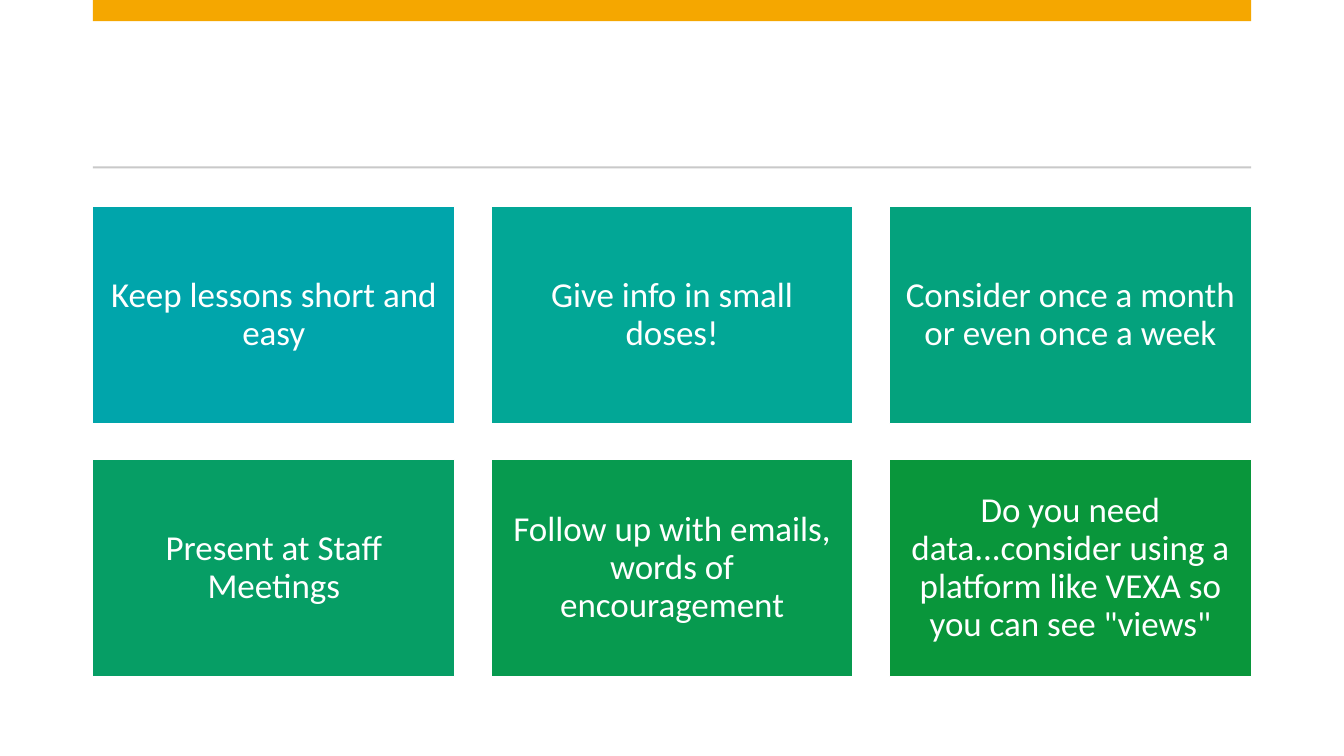
"""Build a slide of six tips for sharing lessons with staff."""
import pptx
import pptx.util
import pptx.dml.color
import pptx.enum.shapes
import pptx.enum.text

Inches = pptx.util.Inches
RGBColor = pptx.dml.color.RGBColor

WHITE = RGBColor(0xFF, 0xFF, 0xFF)
GOLD = RGBColor(0xF5, 0xA7, 0x00)
GREY = RGBColor(0xC9, 0xC9, 0xC9)

TIPS = [
    ("Keep lessons short and easy", RGBColor(0x00, 0xA5, 0xAB)),
    ("Give info in small doses!", RGBColor(0x02, 0xA7, 0x96)),
    ("Consider once a month or even once a week", RGBColor(0x04, 0xA2, 0x7D)),
    ("Present at Staff Meetings", RGBColor(0x06, 0x9E, 0x65)),
    ("Follow up with emails, words of encouragement", RGBColor(0x07, 0x9A, 0x4F)),
    ('Do you need data...consider using a platform like VEXA so you can see "views"',
     RGBColor(0x09, 0x96, 0x3B)),
]
BARS = [(0, 0.21, GOLD), (1.65, 0.02, GREY)]

LEFT, TOP, SPAN = 0.92, 2.05, 11.49
WIDE, HIGH, GAP, COLS = 3.59, 2.15, 0.36, 3

FRAME = {
    "word_wrap": True,
    "vertical_anchor": pptx.enum.text.MSO_ANCHOR.MIDDLE,
    "margin_left": Inches(0.1),
    "margin_right": Inches(0.1),
    "margin_top": Inches(0.1),
    "margin_bottom": Inches(0.1),
}
PARA = {"alignment": pptx.enum.text.PP_ALIGN.CENTER, "line_spacing": 0.9}
FONT = {"name": "Calibri", "size": pptx.util.Pt(25)}


def apply(item, values):
    for name, value in values.items():
        setattr(item, name, value)


def add_box(slide, left, top, wide, high, fill):
    box = slide.shapes.add_shape(
        pptx.enum.shapes.MSO_SHAPE.RECTANGLE,
        Inches(left), Inches(top), Inches(wide), Inches(high))
    box.shadow.inherit = False
    box.fill.solid()
    box.fill.fore_color.rgb = fill
    box.line.fill.background()
    return box


def add_tip(slide, index, text, fill):
    row, col = divmod(index, COLS)
    box = add_box(slide, LEFT + col * (WIDE + GAP), TOP + row * (HIGH + GAP),
                  WIDE, HIGH, fill)
    box.line.color.rgb = WHITE
    box.line.width = pptx.util.Pt(1)
    frame = box.text_frame
    para = frame.paragraphs[0]
    run = para.add_run()
    run.text = text
    apply(frame, FRAME)
    apply(para, PARA)
    apply(run.font, FONT)
    run.font.color.rgb = WHITE


def main():
    deck = pptx.Presentation()
    deck.slide_width, deck.slide_height = Inches(13.33), Inches(7.5)
    slide = deck.slides.add_slide(deck.slide_layouts[6])
    slide.background.fill.solid()
    slide.background.fill.fore_color.rgb = WHITE
    for top, high, fill in BARS:
        add_box(slide, LEFT, top, SPAN, high, fill)
    for index, (text, fill) in enumerate(TIPS):
        add_tip(slide, index, text, fill)
    deck.save("out.pptx")


if __name__ == "__main__":
    main()
